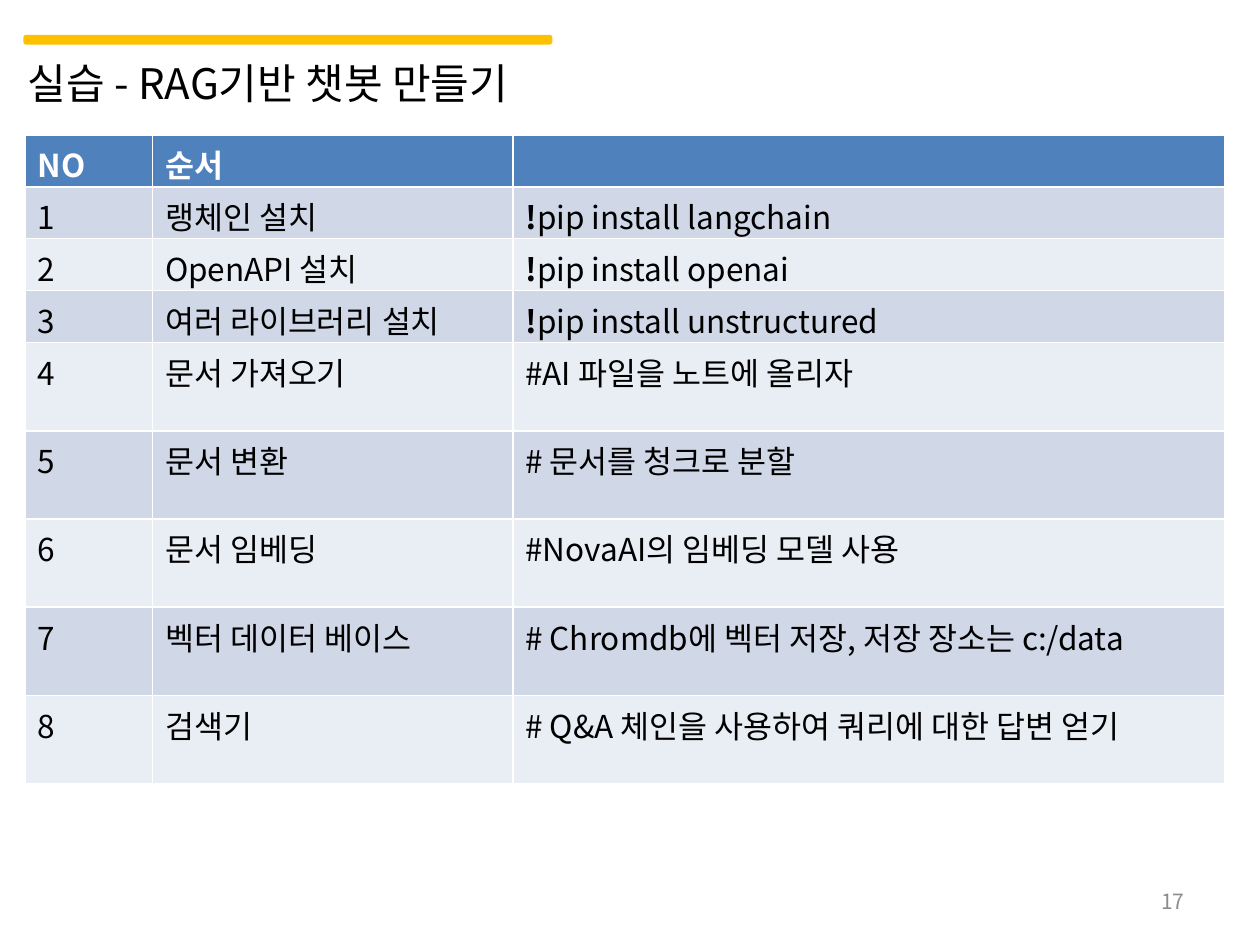
from pptx import Presentation
from pptx.dml.color import RGBColor
from pptx.enum.shapes import MSO_SHAPE
from pptx.enum.text import MSO_ANCHOR, PP_ALIGN
from pptx.oxml.ns import qn
from pptx.util import Inches, Pt

ROUNDED = MSO_SHAPE.ROUNDED_RECTANGLE
TOP, MIDDLE = MSO_ANCHOR.TOP, MSO_ANCHOR.MIDDLE
LEFT, RIGHT = PP_ALIGN.LEFT, PP_ALIGN.RIGHT
TITLE_ONLY = 5

# Content
TITLE = "실습 - RAG기반 챗봇 만들기"
PAGE_NUMBER = "17"
HEADER = ("NO", "순서", "")
STEPS = [
    ("랭체인 설치", "!pip install langchain"),
    ("OpenAPI 설치", "!pip install openai"),
    ("여러 라이브러리 설치", "!pip install unstructured"),
    ("문서 가져오기", "#AI 파일을 노트에 올리자"),
    ("문서 변환", "# 문서를 청크로 분할"),
    ("문서 임베딩", "#NovaAI의 임베딩 모델 사용"),
    ("벡터 데이터 베이스", "# Chromdb에 벡터 저장, 저장 장소는 c:/data"),
    ("검색기", "# Q&A 체인을 사용하여 쿼리에 대한 답변 얻기"),
]
COLUMN_WIDTHS = (1.01, 2.86, 5.65)
HEADER_HEIGHT, COMMAND_HEIGHT, NOTE_HEIGHT = 0.39, 0.41, 0.7

THEME = {
    "font": "Noto Sans CJK KR",
    "title_size": 24, "table_size": 18, "page_size": 12,
    "text": "000000", "header_text": "FFFFFF", "page_text": "8C8C8C",
    "accent": "FFC000", "header": "4F81BD", "bands": ("D0D8E8", "E9EDF4"),
}


def color(name):
    return RGBColor.from_string(name)


def style(para, size, ink, bold=False, align=LEFT):
    para.alignment = align
    font = para.font
    font.name, font.size, font.bold = THEME["font"], Pt(size), bold
    font.color.rgb = color(ink)
    # Hangul takes the East Asian typeface
    properties = para._p.get_or_add_pPr().find(qn("a:defRPr"))
    east_asian = properties.makeelement(qn("a:ea"), {"typeface": THEME["font"]})
    properties.find(qn("a:latin")).addnext(east_asian)


def place(shape, left, top, width, height):
    shape.left, shape.top = Inches(left), Inches(top)
    shape.width, shape.height = Inches(width), Inches(height)


def fill_cell(cell, text, fill, ink, bold):
    cell.fill.solid()
    cell.fill.fore_color.rgb = color(fill)
    cell.margin_bottom = 0
    para = cell.text_frame.paragraphs[0]
    style(para, THEME["table_size"], ink, bold)
    if text.startswith("!"):
        mark = para.add_run()
        mark.text, mark.font.bold = "!", True
        text = text[1:]
    if text:
        para.add_run().text = text


deck = Presentation()
deck.slide_width, deck.slide_height = Inches(10), Inches(7.5)
page = deck.slides.add_slide(deck.slide_layouts[TITLE_ONLY])

# Accent bar
bar = page.shapes.add_shape(ROUNDED, Inches(0.2), Inches(0.29), Inches(4.17), Inches(0.05))
bar.shadow.inherit = False
bar.fill.solid()
bar.fill.fore_color.rgb = bar.line.color.rgb = color(THEME["accent"])
bar.line.width = Pt(2)

# Title
title = page.shapes.title
place(title, 0.12, 0.41, 5.04, 0.5)
title.text_frame.text = TITLE
title.text_frame.vertical_anchor = TOP
style(title.text_frame.paragraphs[0], THEME["title_size"], THEME["text"])

# Table of steps
rows = [HEADER] + [(str(number), *step) for number, step in enumerate(STEPS, 1)]
heights = [HEADER_HEIGHT] + [
    COMMAND_HEIGHT if detail.startswith("!") else NOTE_HEIGHT for _, detail in STEPS
]
table = page.shapes.add_table(
    len(rows), len(COLUMN_WIDTHS), Inches(0.2), Inches(1.07),
    Inches(sum(COLUMN_WIDTHS)), Inches(sum(heights)),
).table
for column, width in zip(table.columns, COLUMN_WIDTHS):
    column.width = Inches(width)
for index, (texts, height) in enumerate(zip(rows, heights)):
    table.rows[index].height = Inches(height)
    is_header = index == 0
    fill = THEME["header"] if is_header else THEME["bands"][(index - 1) % 2]
    ink = THEME["header_text"] if is_header else THEME["text"]
    for cell, text in zip(table.rows[index].cells, texts):
        fill_cell(cell, text, fill, ink, is_header)

# Page number
box = page.shapes.add_textbox(Inches(7.17), Inches(6.95), Inches(2.33), Inches(0.4))
box.text_frame.word_wrap = True
box.text_frame.vertical_anchor = MIDDLE
box.text_frame.text = PAGE_NUMBER
style(box.text_frame.paragraphs[0], THEME["page_size"], THEME["page_text"], align=RIGHT)

deck.save("out.pptx")
